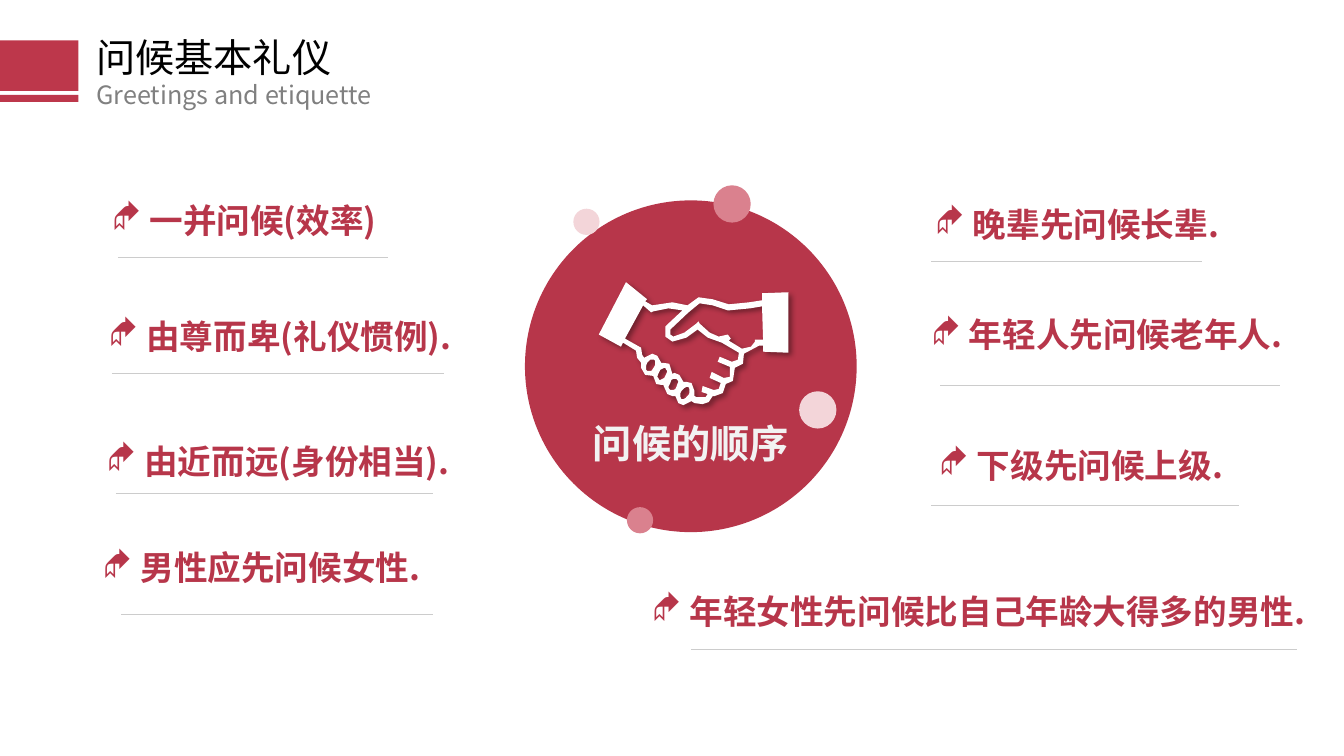
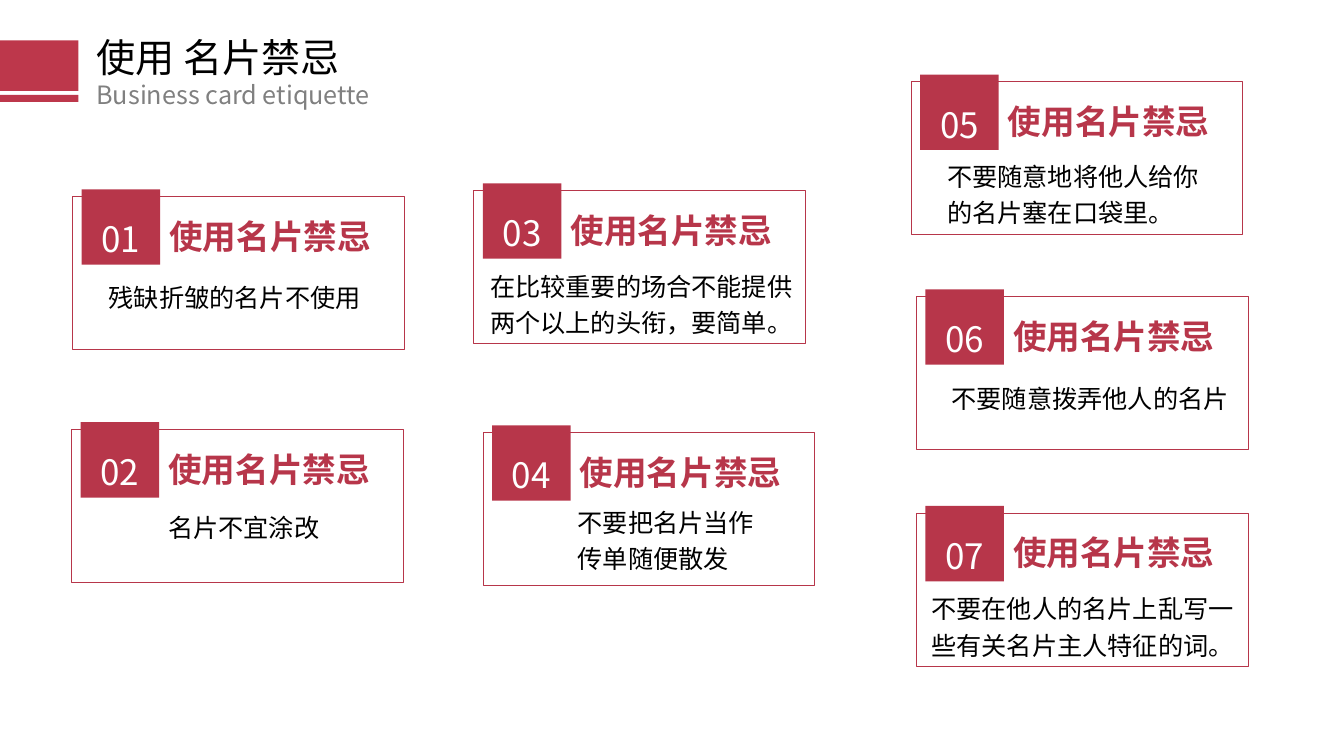
"""Builds two slides on greeting and business card etiquette."""
from math import cos, pi, sin

from lxml import etree
from pptx import Presentation
from pptx.dml.color import RGBColor
from pptx.enum import shapes, text
from pptx.oxml import ns
from pptx.util import Cm, Pt

FONT = "Noto Sans CJK SC"
BULLET_FONT = "Wingdings"
BAND = RGBColor(0xBD, 0x37, 0x4B)
CRIMSON = RGBColor(0xB7, 0x36, 0x4A)
ROSE = RGBColor(0xDA, 0x81, 0x8E)
BLUSH = RGBColor(0xF3, 0xD5, 0xD9)
RULE = RGBColor(0xCC, 0xCC, 0xCC)
GREY = RGBColor(0x80, 0x80, 0x80)
PALE = RGBColor(0xF2, 0xF2, 0xF2)
WHITE = RGBColor(0xFF, 0xFF, 0xFF)
BLACK = RGBColor(0, 0, 0)
RECT = shapes.MSO_SHAPE.RECTANGLE
OVAL = shapes.MSO_SHAPE.OVAL
BULLET_INDENT = 0.95
LETTER_WIDTH = 0.85

# Each greeting: wording, label left and top, rule start, end and height.
GREETINGS = [
    ("一并问候(效率)", 2.82, 5.03, 2.97, 9.78, 6.48),
    ("由尊而卑(礼仪惯例).", 2.74, 7.95, 2.82, 11.2, 9.4),
    ("由近而远(身份相当).", 2.69, 11.1, 2.92, 10.92, 12.42),
    ("男性应先问候女性.", 2.59, 13.79, 3.05, 10.92, 15.47),
    ("晚辈先问候长辈.", 23.57, 5.13, 23.47, 30.28, 6.58),
    ("年轻人先问候老年人.", 23.47, 7.92, 23.7, 32.26, 9.7),
    ("下级先问候上级.", 23.67, 11.2, 23.47, 31.22, 12.73),
    ("年轻女性先问候比自己年龄大得多的男性.", 16.43, 14.88, 17.42, 32.69, 16.36),
]
DOTS = [
    (17.98, 4.67, 0.94, ROSE),
    (15.8, 12.78, 0.66, ROSE),
    (14.45, 5.26, 0.66, BLUSH),
    (20.14, 9.86, 0.94, BLUSH),
]
HANDS_OUTLINE = [
    (188, 70), (188, 10), (162, 11), (162, 18), (149, 20), (129, 22), (113, 17),
    (99, 15), (88, 23), (73, 20), (53, 23), (46, 19), (48, 17), (27, 0), (0, 52),
    (22, 64), (24, 60), (37, 68), (38, 75), (42, 80), (42, 85), (46, 92), (54, 93),
    (57, 101), (62, 102), (64, 102), (68, 111), (73, 113), (76, 113), (79, 120),
    (84, 122), (92, 118), (95, 120), (103, 121), (109, 119), (113, 113), (115, 113),
    (123, 110), (126, 101), (133, 98), (135, 85), (143, 81), (144, 71), (159, 63),
    (163, 63), (163, 69),
]
RIGHT_PALM = [
    (155, 57), (155, 59), (151, 64), (142, 66), (129, 58), (131, 56), (128, 52),
    (119, 54), (110, 50), (100, 41), (99, 39), (97, 41), (85, 50), (74, 54), (71, 52),
    (71, 47), (89, 30), (100, 21), (113, 23), (128, 28), (129, 28), (150, 26),
    (162, 24), (163, 57),
]
LEFT_PALM = [
    (138, 77), (132, 79), (120, 74), (118, 79), (130, 84), (130, 94), (124, 95),
    (112, 89), (110, 95), (121, 100), (119, 106), (114, 107), (103, 103), (102, 109),
    (108, 111), (106, 114), (97, 114), (95, 113), (95, 108), (92, 100), (87, 99),
    (84, 99), (80, 92), (75, 90), (73, 91), (70, 81), (64, 80), (62, 80), (58, 73),
    (53, 71), (45, 75), (43, 72), (42, 65), (26, 56), (44, 23), (52, 30), (54, 29),
    (69, 26), (83, 28), (67, 43), (66, 44), (66, 54), (73, 59), (87, 55), (98, 47),
    (108, 55), (122, 60), (139, 70),
]
FINGERTIPS = [(85.5, 110), (74, 101.5), (63, 91), (51.5, 82.5)]

CARD_HEADING = "使用名片禁忌"
# Each card: left, top, wording, wording's offset from the card and width.
CARDS = [
    (1.83, 4.95, "残缺折皱的名片不使用", 0.91, 2.01, 6.65),
    (1.8, 10.82, "名片不宜涂改", 2.44, 1.93, 6.65),
    (11.94, 4.8, "在比较重要的场合不能提供两个以上的头衔，要简单。", 0.41, 1.88, 7.98),
    (12.17, 10.9, "不要把名片当作传单随便散发", 2.39, 1.73, 4.67),
    (22.96, 2.06, "不要随意地将他人给你的名片塞在口袋里。", 0.91, 1.85, 6.65),
    (23.09, 7.47, "不要随意拨弄他人的名片", 0.89, 2.03, 7.14),
    (23.09, 12.93, "不要在他人的名片上乱写一些有关名片主人特征的词。", 0.38, 1.88, 7.8),
]


def write(frame, words, size, color, bold=False):
    frame.text = words
    paragraph = frame.paragraphs[0]
    font = paragraph.runs[0].font
    font.name, font.size, font.bold = FONT, Pt(size), bold
    font.color.rgb = color
    etree.SubElement(font._element, ns.qn("a:ea"), typeface=FONT)
    return paragraph


def pad(frame, bottom=0):
    frame.margin_left = frame.margin_top = frame.margin_right = 0
    frame.margin_bottom = Cm(bottom)


def add_text(slide, place, words, size, color, bold=False, wrap=False, padded=False):
    frame = slide.shapes.add_textbox(*map(Cm, place)).text_frame
    frame.word_wrap = wrap
    if not padded:
        pad(frame)
    return write(frame, words, size, color, bold)


def paint(shape, fill=None, line=None):
    shape.shadow.inherit = False
    if fill is None:
        shape.fill.background()
    else:
        shape.fill.solid()
        shape.fill.fore_color.rgb = fill
    if line is None:
        shape.line.fill.background()
    else:
        shape.line.color.rgb = line
        shape.line.width = Pt(0.5)
    return shape


def add_block(slide, kind, place, fill=None, line=None):
    return paint(slide.shapes.add_shape(kind, *map(Cm, place)), fill, line)


def add_header(slide, title, subtitle):
    for top, height in ((1.02, 1.27), (2.39, 0.18)):
        add_block(slide, RECT, (0, top, 1.98, height), BAND)
    add_text(slide, (2.18, 0.72, 10, 1.45), title, 28, BLACK, padded=True)
    add_text(slide, (2.18, 1.88, 10, 1.02), subtitle, 18, GREY, padded=True)


def add_rule(slide, start, end, height):
    rule = slide.shapes.add_connector(
        shapes.MSO_CONNECTOR.STRAIGHT, Cm(start), Cm(height), Cm(end), Cm(height))
    rule.line.color.rgb = RULE
    rule.line.width = Pt(0.5)
    etree.SubElement(rule._element.spPr, ns.qn("a:effectLst"))


def add_greeting(slide, words, left, top, start, end, height):
    width = BULLET_INDENT + LETTER_WIDTH * len(words)
    label = add_text(slide, (left, top, width, 1.75), words, 24, CRIMSON, bold=True)
    props = label._p.get_or_add_pPr()
    props.set("marL", str(Cm(BULLET_INDENT)))
    props.set("indent", str(-Cm(BULLET_INDENT)))
    etree.SubElement(props, ns.qn("a:buFont"), typeface=BULLET_FONT)
    etree.SubElement(props, ns.qn("a:buChar"), char="◆")
    add_rule(slide, start, end, height)


def fingertip(x, y, long=6.5, short=4, tilt=-pi / 3, steps=16):
    turns = [2 * pi * step / steps for step in range(steps)]
    return [(x + long * cos(t) * cos(tilt) - short * sin(t) * sin(tilt),
             y + long * cos(t) * sin(tilt) + short * sin(t) * cos(tilt)) for t in turns]


def add_hands(slide):
    contours = [HANDS_OUTLINE, RIGHT_PALM, LEFT_PALM]
    contours += [fingertip(*tip) for tip in FINGERTIPS]
    builder = slide.shapes.build_freeform(*contours[0][0], scale=Cm(2.54) / 100)
    for contour in contours:
        builder.move_to(*contour[0])
        builder.add_line_segments(contour[1:], close=True)
    hands = paint(builder.convert_to_shape(Cm(15.09), Cm(7.11)), WHITE)
    effects = hands._element.spPr.find(ns.qn("a:effectLst"))
    shadow = etree.SubElement(effects, ns.qn("a:outerShdw"), blurRad=str(Pt(4)),
                              dist=str(Pt(3)), dir="2700000", algn="tl")
    tint = etree.SubElement(shadow, ns.qn("a:srgbClr"), val="000000")
    etree.SubElement(tint, ns.qn("a:alpha"), val="40000")


def add_card(slide, number, left, top, words, dx, dy, width):
    add_block(slide, RECT, (left, top, 8.36, 3.86), line=CRIMSON)
    badge = add_block(slide, RECT, (left + 0.23, top - 0.18, 1.98, 1.9), CRIMSON)
    badge.text_frame.vertical_anchor = text.MSO_ANCHOR.BOTTOM
    write(badge.text_frame, f"{number:02}", 25, WHITE).alignment = text.PP_ALIGN.CENTER
    add_text(slide, (left + 2.44, top + 0.48, 5.74, 1.24), CARD_HEADING, 24, CRIMSON, bold=True)
    advice = add_text(slide, (left + dx, top + dy, width, 2.01), words, 18, BLACK, wrap=True)
    advice.line_spacing = 1.2


def build_greetings(slide):
    add_header(slide, "问候基本礼仪", "Greetings and etiquette")
    circle = add_block(slide, OVAL, (13.23, 5.05, 8.36, 8.36), CRIMSON)
    frame = circle.text_frame
    frame.word_wrap = False
    frame.vertical_anchor = text.MSO_ANCHOR.BOTTOM
    pad(frame, bottom=0.43)
    write(frame, "问候的顺序", 28, PALE, bold=True).alignment = text.PP_ALIGN.CENTER
    for left, top, size, color in DOTS:
        add_block(slide, OVAL, (left, top, size, size), color)
    add_hands(slide)
    for greeting in GREETINGS:
        add_greeting(slide, *greeting)


def build_cards(slide):
    add_header(slide, "使用 名片禁忌", "Business card etiquette")
    for number, card in enumerate(CARDS, 1):
        add_card(slide, number, *card)


def main():
    deck = Presentation()
    deck.slide_width, deck.slide_height = Cm(33.87), Cm(19.05)
    for build in (build_greetings, build_cards):
        build(deck.slides.add_slide(deck.slide_layouts[6]))
    deck.save("out.pptx")


if __name__ == "__main__":
    main()
